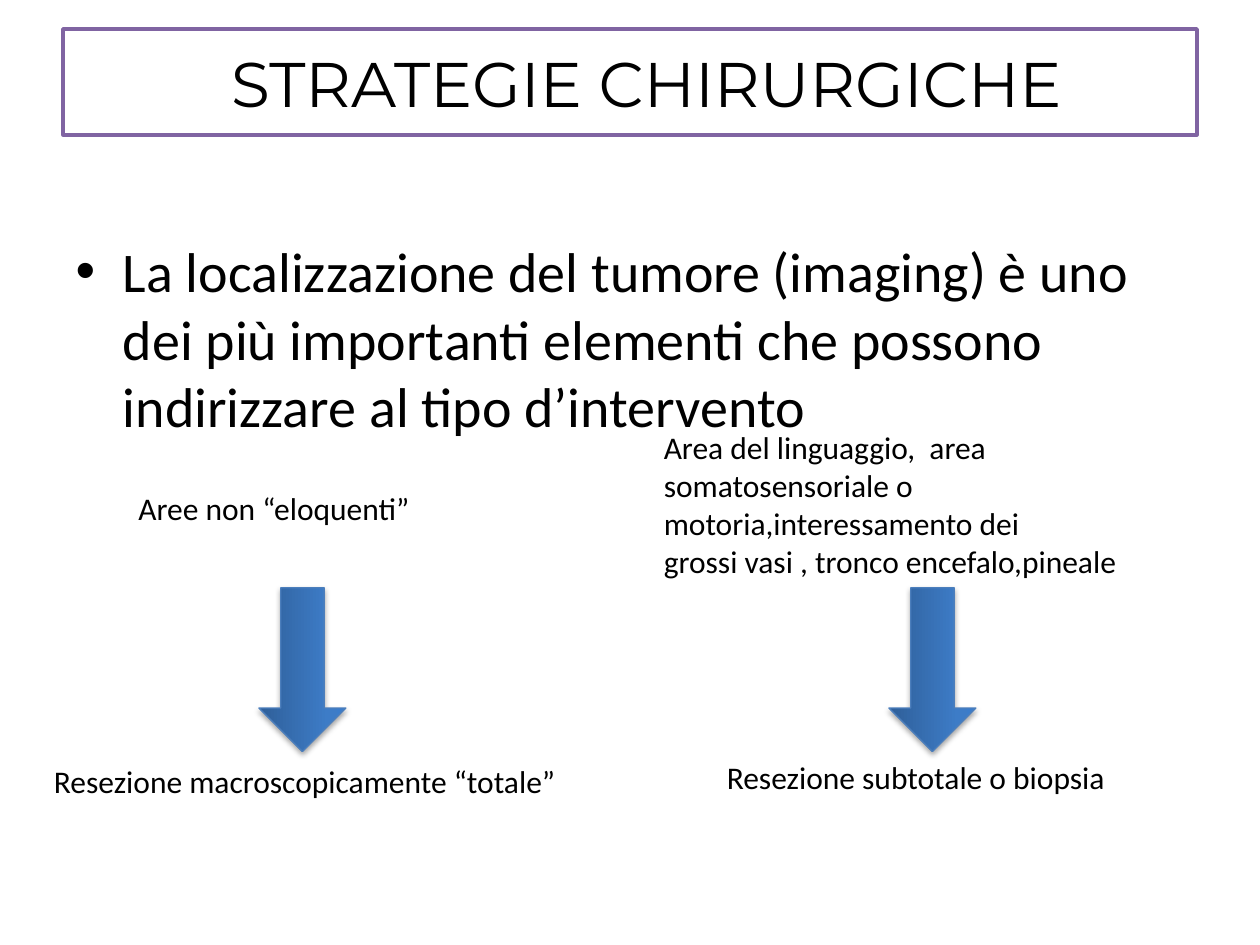
from copy import deepcopy

from lxml import etree
from pptx import Presentation, util as u
from pptx.dml.color import RGBColor
from pptx.enum import shapes, text
from pptx.oxml import ns

BLACK = RGBColor(0, 0, 0)
WHITE = RGBColor(0xFF, 0xFF, 0xFF)
PURPLE = RGBColor(0x80, 0x64, 0xA2)
ARROW_LINE = RGBColor(0x4B, 0x7E, 0xBC)
ARROW_STOPS = [
    (0, RGBColor(0x2F, 0x5F, 0x99)),
    (0.8, RGBColor(0x3D, 0x7C, 0xC7)),
    (1, RGBColor(0x3A, 0x7C, 0xCB)),
]

WIDTH, HEIGHT = 10, 7.5
MARGIN = WIDTH / 20
COLUMN = WIDTH / 2
ARROW_LENGTH, ARROW_WIDTH = 1.3, 0.69
ARROW_X, ARROW_Y = 1.75, 4.97  # offset inside a column, top of the slide


def place(s, left, top, width, height):
    s.left, s.top = u.Inches(left), u.Inches(top)
    s.width, s.height = u.Inches(width), u.Inches(height)


def format_text(tf, size, font="Calibri"):
    for p in tf.paragraphs:
        for r in p.runs:
            r.font.size = u.Pt(size)
            r.font.name = font
            r.font.color.rgb = BLACK


def add_title(s, box):
    place(s, *box)
    s.fill.solid()
    s.fill.fore_color.rgb = WHITE
    s.line.color.rgb = PURPLE
    s.line.width = u.Pt(2)
    tf = s.text_frame
    tf.text = "STRATEGIE CHIRURGICHE"
    tf.margin_left = u.Inches(0.36)
    tf.vertical_anchor = text.MSO_ANCHOR.MIDDLE
    tf.paragraphs[0].alignment = text.PP_ALIGN.CENTER
    format_text(tf, 36, "Montserrat")


def add_statement(s, box):
    place(s, *box)
    s.text_frame.text = (
        "La localizzazione del tumore (imaging) è uno dei più importanti "
        "elementi che possono indirizzare al tipo d’intervento"
    )
    format_text(s.text_frame, 32)


def add_label(slide, box, label):
    s = slide.shapes.add_textbox(*map(u.Inches, box))
    tf = s.text_frame
    tf.word_wrap = True
    tf.text = label
    format_text(tf, 18)


def add_shadow(s):
    """Soft black shadow falling straight down."""
    effects = s._element.spPr.find(ns.qn("a:effectLst"))
    shadow = etree.SubElement(effects, ns.qn("a:outerShdw"), blurRad="40000",
                              dist="23000", dir="5400000", rotWithShape="0")
    color = etree.SubElement(shadow, ns.qn("a:srgbClr"), val=str(BLACK))
    etree.SubElement(color, ns.qn("a:alpha"), val="35000")


def add_down_arrow(slide, left, top):
    """Right arrow turned by a quarter; left and top are of the unturned box."""
    box = (left, top, ARROW_LENGTH, ARROW_WIDTH)
    s = slide.shapes.add_shape(shapes.MSO_SHAPE.RIGHT_ARROW, *map(u.Inches, box))
    s.rotation = 90
    s.fill.gradient()
    s.fill.gradient_angle = 90
    stop_list = s._element.spPr.find(".//" + ns.qn("a:gsLst"))
    stop_list.append(deepcopy(stop_list[-1]))
    for stop, (position, color) in zip(s.fill.gradient_stops, ARROW_STOPS):
        stop.position = position
        stop.color.rgb = color
    s.line.color.rgb = ARROW_LINE
    s.line.width = u.Pt(0.75)
    s.shadow.inherit = False
    add_shadow(s)


def add_strategy(slide, left, area, area_box, surgery, surgery_box):
    """Column with a tumour area, an arrow and the surgery; boxes start at left."""
    add_down_arrow(slide, left + ARROW_X, ARROW_Y)
    for label, (x, *rest) in ((area, area_box), (surgery, surgery_box)):
        add_label(slide, (left + x, *rest), label)


def main():
    prs = Presentation()
    prs.slide_width, prs.slide_height = u.Inches(WIDTH), u.Inches(HEIGHT)
    slide = prs.slides.add_slide(prs.slide_layouts.get_by_name("Title and Content"))
    content_width = WIDTH - 2 * MARGIN
    add_title(slide.shapes.title, (MARGIN, 0.23, content_width, 0.84))
    add_statement(slide.placeholders[1], (MARGIN, 1.83, content_width, 4.75))
    add_strategy(
        slide, 0,
        "Aree non “eloquenti”", (1, 3.83, 2.92, 0.4),
        "Resezione macroscopicamente “totale”", (0.33, 6, 4.83, 0.4),
    )
    add_strategy(
        slide, COLUMN,
        "Area del linguaggio,  area somatosensoriale o motoria,interessamento dei\n"
        "grossi vasi , tronco encefalo,pineale", (0.17, 3.35, 4.33, 1.31),
        "Resezione subtotale o biopsia", (0.67, 5.97, 3.83, 0.4),
    )
    prs.save("out.pptx")


if __name__ == "__main__":
    main()
